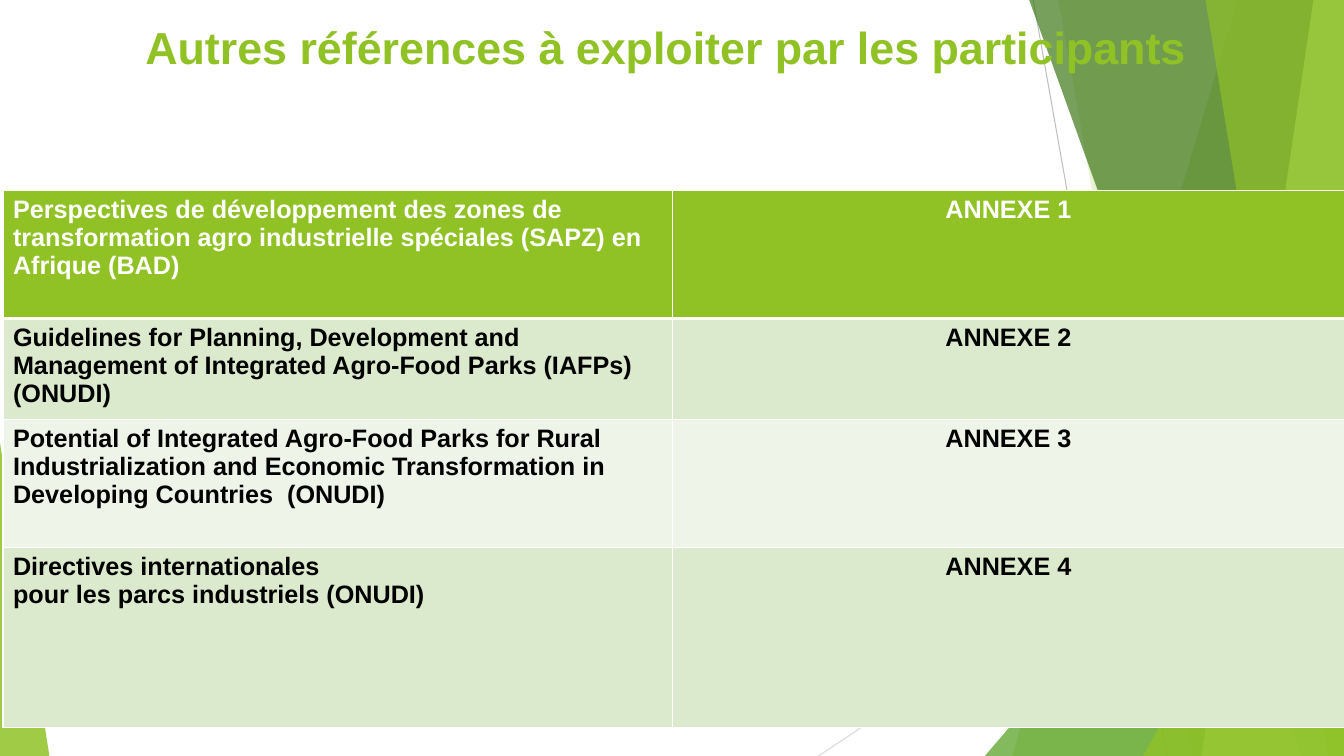
from dataclasses import dataclass

from lxml import etree
from pptx import Presentation
from pptx import slide as slides
from pptx import util as u
from pptx.dml.color import RGBColor
from pptx.enum import shapes, text
from pptx.oxml import ns
from pptx.shapes import autoshape
from pptx.text import text as texts

WIDTH, HEIGHT = u.Inches(13.333), u.Inches(7.5)
FONT = "Arial"
WHITE = RGBColor(0xFF, 0xFF, 0xFF)
BLACK = RGBColor(0x00, 0x00, 0x00)
LIME = RGBColor(0x90, 0xC2, 0x26)
GREEN = RGBColor(0x54, 0xA0, 0x21)
FOREST = RGBColor(0x3F, 0x78, 0x19)
PALE_LIME = RGBColor(0xC0, 0xE4, 0x74)
SAGE = RGBColor(0xDB, 0xE9, 0xCD)
MIST = RGBColor(0xEE, 0xF4, 0xE8)
GREY = RGBColor(0xBF, 0xBF, 0xBF)
LIGHT_GREY = RGBColor(0xD9, 0xD9, 0xD9)


# All lengths below are percentages of the slide's width or height
@dataclass(frozen=True)
class Ray:
    start: tuple[float, float]
    end: tuple[float, float]
    color: RGBColor


@dataclass(frozen=True)
class Band:
    """Full-height facet that reaches the right edge."""
    top_left: float
    bottom_left: float
    color: RGBColor
    opacity: int


@dataclass(frozen=True)
class Corner:
    """Right-angled triangle standing on the bottom edge."""
    left: float
    top: float
    width: float
    apex: float
    color: RGBColor
    opacity: int


@dataclass(frozen=True)
class Reference:
    title: str
    annex: str
    height: float
    fill: RGBColor
    ink: RGBColor = BLACK


RAYS = [
    Ray((76.88, 0), (86.85, 100), GREY),
    Ray((100, 53.73), (60.9, 100), LIGHT_GREY),
]
FACETS = [
    Band(92.1, 75.3, LIME, 30),
    Band(78.75, 88.73, LIME, 20),
    Corner(73.28, 44.4, 26.72, 1, GREEN, 72),
    Band(76.58, 96.83, FOREST, 70),
    Band(97.73, 89.4, PALE_LIME, 70),
    Band(89.7, 98.85, LIME, 65),
    Corner(85.05, 52.4, 14.95, 1, LIME, 80),
    Corner(0, 58.53, 3.68, 0, LIME, 85),
]
COLUMNS = [49.8, 50.02]
REFERENCES = [
    Reference("Perspectives de développement des zones de transformation agro "
              "industrielle spéciales (SAPZ) en Afrique (BAD)",
              "ANNEXE 1", 16.93, LIME, WHITE),
    Reference("Guidelines for Planning, Development and Management of "
              "Integrated Agro-Food Parks (IAFPs) (ONUDI)",
              "ANNEXE 2", 12.5, SAGE),
    Reference("Potential of Integrated Agro-Food Parks for Rural Industrialization "
              "and Economic Transformation in Developing Countries  (ONUDI)",
              "ANNEXE 3", 16.93, MIST),
    Reference("Directives internationales\npour les parcs industriels (ONUDI)",
              "ANNEXE 4", 23.87, SAGE),
]


def across(percent: float) -> int:
    return round(WIDTH * percent / 100)


def down(percent: float) -> int:
    return round(HEIGHT * percent / 100)


def write(frame: texts.TextFrame, words: str, size: int, ink: RGBColor,
          centred: bool) -> None:
    frame.text = words
    frame.word_wrap = True
    for para in frame.paragraphs:
        para.alignment = text.PP_ALIGN.CENTER if centred else text.PP_ALIGN.LEFT
        for span in para.runs:
            span.font.name = FONT
            span.font.size = u.Pt(size)
            span.font.bold = True
            span.font.color.rgb = ink


def paint(shape: autoshape.Shape, color: RGBColor, opacity: int) -> None:
    shape.shadow.inherit = False
    shape.line.fill.background()
    shape.fill.solid()
    shape.fill.fore_color.rgb = color
    tint = shape.fill._xPr.find(".//" + ns.qn("a:srgbClr"))
    etree.SubElement(tint, ns.qn("a:alpha"), val=str(opacity * 1000))


def draw_ray(page: slides.Slide, ray: Ray) -> None:
    line = page.shapes.add_connector(
        shapes.MSO_CONNECTOR.STRAIGHT, across(ray.start[0]), down(ray.start[1]),
        across(ray.end[0]), down(ray.end[1]))
    line.line.color.rgb = ray.color
    line.line.width = u.Pt(0.75)
    etree.SubElement(line._element.spPr, ns.qn("a:effectLst"))


def draw_facet(page: slides.Slide, facet: Band | Corner) -> None:
    if isinstance(facet, Band):
        outline = page.shapes.build_freeform(across(facet.top_left), 0)
        outline.add_line_segments([(WIDTH, 0), (WIDTH, HEIGHT),
                                   (across(facet.bottom_left), HEIGHT)], close=True)
        shape = outline.convert_to_shape()
    else:
        shape = page.shapes.add_shape(
            shapes.MSO_SHAPE.ISOSCELES_TRIANGLE, across(facet.left), down(facet.top),
            across(facet.width), down(100 - facet.top))
        shape.adjustments[0] = facet.apex
    paint(shape, facet.color, facet.opacity)


def draw_title(page: slides.Slide, words: str) -> None:
    box = page.shapes.add_textbox(across(2.18), down(2), across(94.8), down(16.67))
    write(box.text_frame, words, 32, LIME, centred=True)


def add_borders(cell, top: int, bottom: int) -> None:
    properties = cell._tc.get_or_add_tcPr()
    sides = [("lnL", 1), ("lnR", 1), ("lnT", top), ("lnB", bottom)]
    for place, (side, points) in enumerate(sides):
        border = etree.Element(ns.qn(f"a:{side}"), w=str(u.Pt(points)))
        fill = etree.SubElement(border, ns.qn("a:solidFill"))
        etree.SubElement(fill, ns.qn("a:srgbClr"), val=str(WHITE))
        properties.insert(place, border)


def draw_table(page: slides.Slide) -> None:
    height = sum(reference.height for reference in REFERENCES)
    table = page.shapes.add_table(
        len(REFERENCES), len(COLUMNS), across(0.22), down(25.2),
        across(sum(COLUMNS)), down(height)).table
    for column, width in zip(table.columns, COLUMNS):
        column.width = across(width)
    for index, reference in enumerate(REFERENCES):
        table.rows[index].height = down(reference.height)
        for side, words in enumerate((reference.title, reference.annex)):
            cell = table.cell(index, side)
            write(cell.text_frame, words, 18, reference.ink, centred=side == 1)
            cell.fill.solid()
            cell.fill.fore_color.rgb = reference.fill
            # A thicker rule separates the heading row from the rest
            add_borders(cell, top=3 if index == 1 else 1,
                        bottom=3 if index == 0 else 1)


def main() -> None:
    deck = Presentation()
    deck.slide_width, deck.slide_height = WIDTH, HEIGHT
    page = deck.slides.add_slide(deck.slide_layouts[6])

    # Faceted background
    for ray in RAYS:
        draw_ray(page, ray)
    for facet in FACETS:
        draw_facet(page, facet)

    # Title and reference table
    draw_title(page, "Autres références à exploiter par les participants")
    draw_table(page)
    deck.save("out.pptx")


if __name__ == "__main__":
    main()
